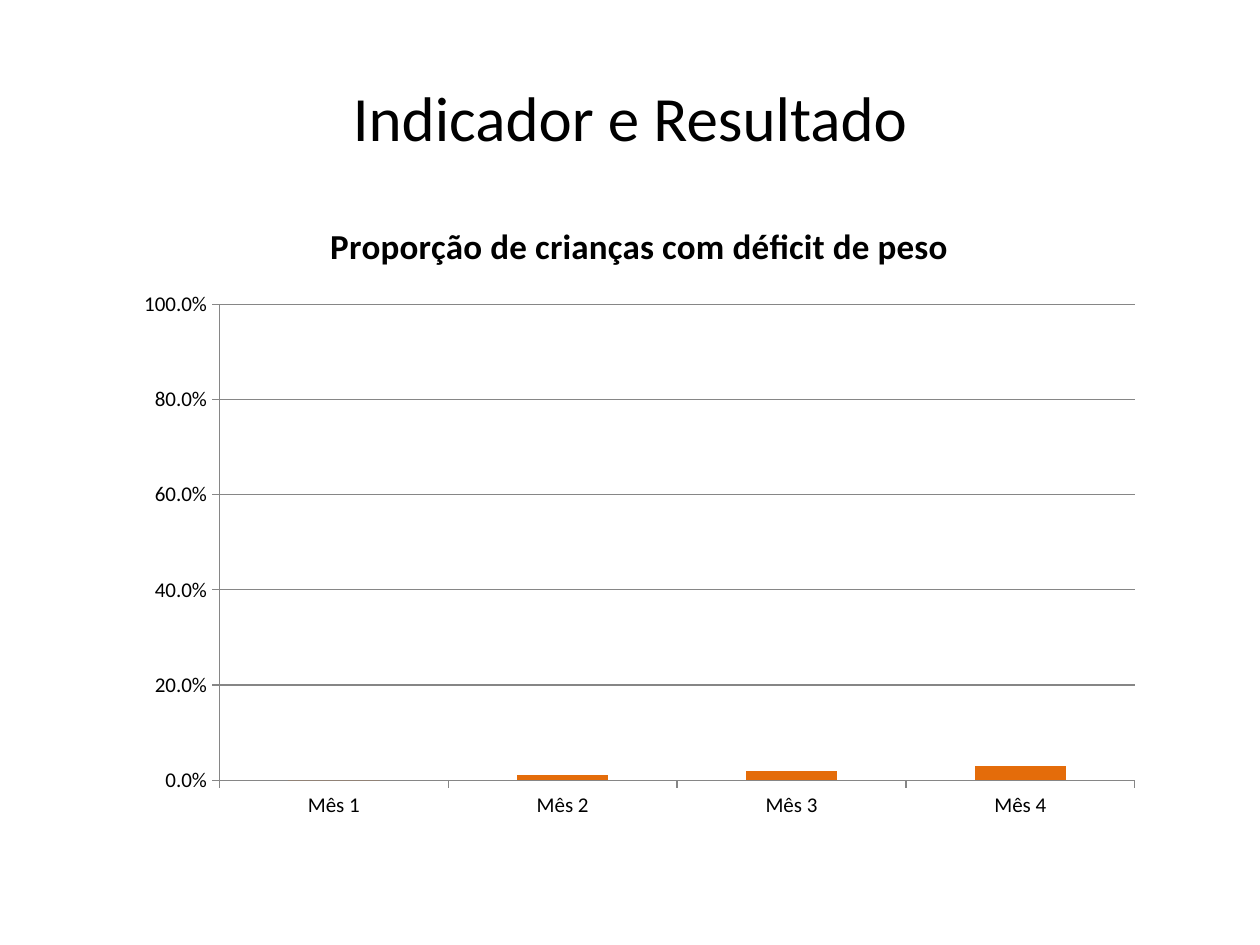
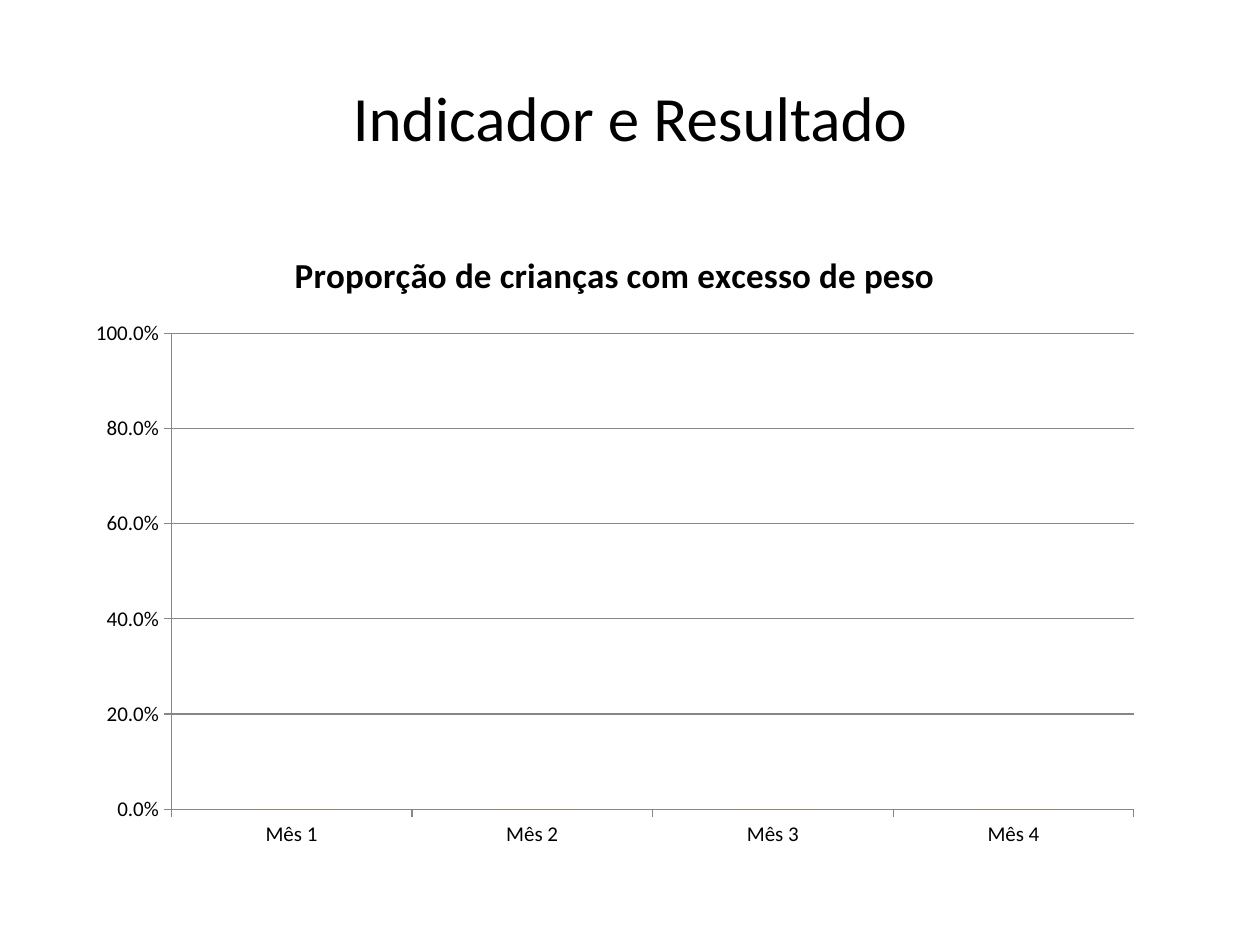
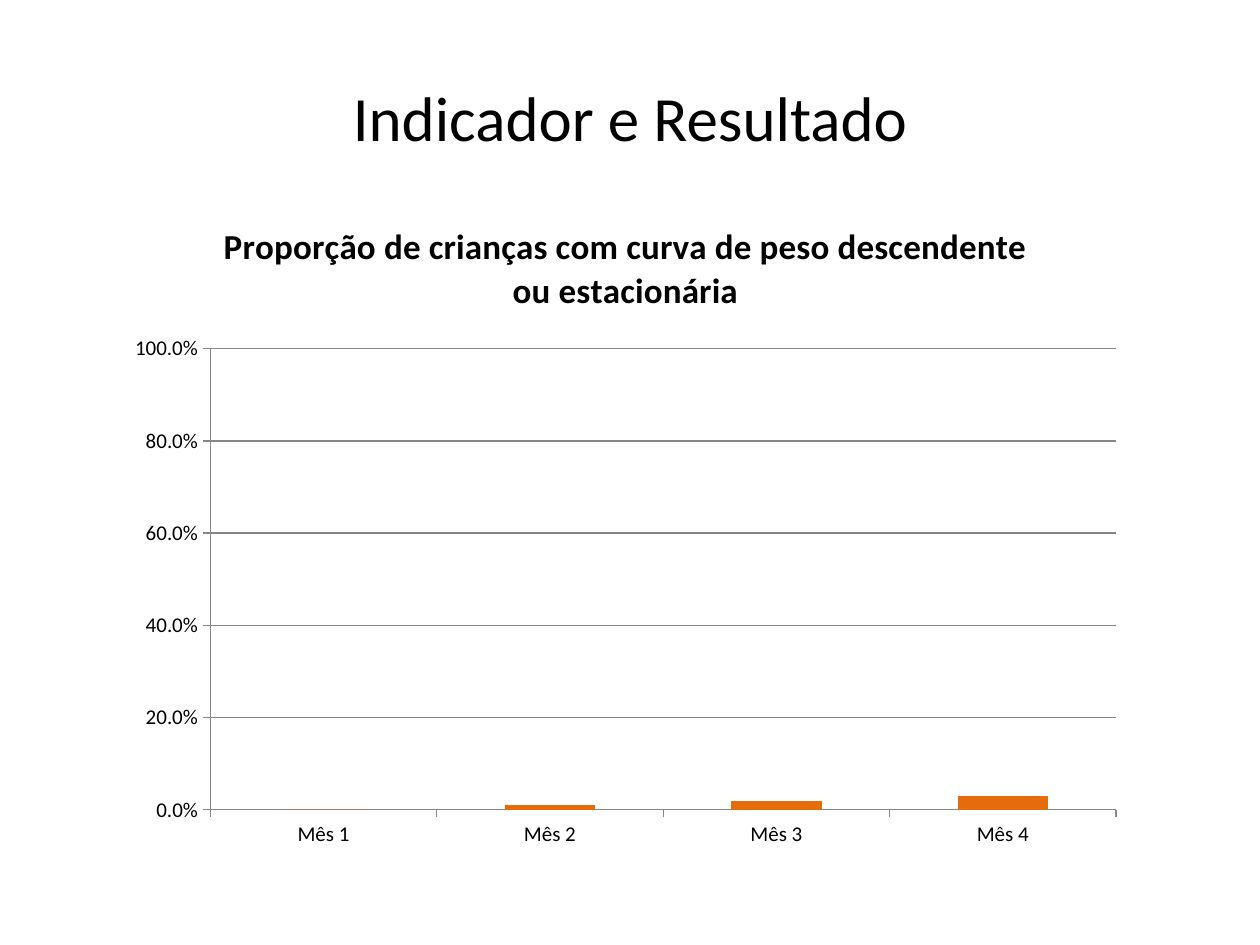
from pptx import Presentation
from pptx.chart.data import CategoryChartData
from pptx.dml.color import RGBColor
from pptx.enum.chart import XL_CHART_TYPE as ChartType, XL_TICK_MARK as Tick
from pptx.enum.text import MSO_ANCHOR as Anchor, PP_ALIGN as Align
from pptx.util import Inches, Pt

BLACK, ORANGE, GRAY = "000000", "E46C0A", "868686"
MONTHS = ["Mês 1", "Mês 2", "Mês 3", "Mês 4"]
INDICATORS = [
    ("Proporção de crianças com déficit de peso",
     (0.98, 1.55, 8.19, 5.04), (0, 0.01, 0.02, 0.03)),
    ("Proporção de crianças com excesso de peso",
     (0.59, 1.78, 8.58, 5.04), (0, 0, 0, 0)),
    ("Proporção de crianças com curva de peso descendente ou estacionária",
     (0.91, 1.55, 8.11, 5.28), (0, 0.01, 0.02, 0.03)),
]


def color(hex_value):
    return RGBColor.from_string(hex_value)


def style_font(font, size, bold=False):
    settings = {"name": "Calibri", "size": Pt(size), "bold": bold}
    for attribute, value in settings.items():
        setattr(font, attribute, value)
    font.color.rgb = color(BLACK)


deck = Presentation()
deck.slide_width, deck.slide_height = Inches(10), Inches(7.5)

for indicator, position, proportions in INDICATORS:
    slide = deck.slides.add_slide(deck.slide_layouts[5])
    slide.background.fill.solid()
    slide.background.fill.fore_color.rgb = color("FFFFFF")

    heading = slide.shapes.title
    frame = {"left": 0.5, "top": 0.3, "width": 9, "height": 1.25}
    for attribute, value in frame.items():
        setattr(heading, attribute, Inches(value))
    heading.text_frame.text = "Indicador e Resultado"
    heading.text_frame.vertical_anchor = Anchor.MIDDLE
    heading_line = heading.text_frame.paragraphs[0]
    heading_line.alignment = Align.CENTER
    style_font(heading_line.runs[0].font, 36)

    monthly = CategoryChartData(number_format="0.0%")
    monthly.categories = MONTHS
    monthly.add_series(indicator, proportions)
    chart = slide.shapes.add_chart(
        ChartType.COLUMN_CLUSTERED, *map(Inches, position), monthly).chart
    style_font(chart.font, 10)
    chart.has_legend = False
    chart.has_title = True
    chart.chart_title.include_in_layout = False
    chart.chart_title.text_frame.text = indicator
    style_font(chart.chart_title.text_frame.paragraphs[0].runs[0].font, 20, True)

    columns = chart.plots[0]
    columns.gap_width = 150
    columns.vary_by_categories = False
    bars = columns.series[0]
    bars.invert_if_negative = False
    bars.format.fill.solid()
    bars.format.fill.fore_color.rgb = color(ORANGE)

    months, percent = chart.category_axis, chart.value_axis
    scale = {"minimum_scale": 0, "maximum_scale": 1, "major_unit": 0.2,
             "has_major_gridlines": True}
    for attribute, value in scale.items():
        setattr(percent, attribute, value)
    percent.tick_labels.number_format = "0.0%"
    percent.tick_labels.number_format_is_linked = False
    for axis in (months, percent):
        axis.major_tick_mark = Tick.OUTSIDE
        axis.minor_tick_mark = Tick.NONE
        style_font(axis.tick_labels.font, 12)
    for rule in (months, percent, percent.major_gridlines):
        rule.format.line.color.rgb = color(GRAY)
        rule.format.line.width = Pt(0.75)

deck.save("out.pptx")
